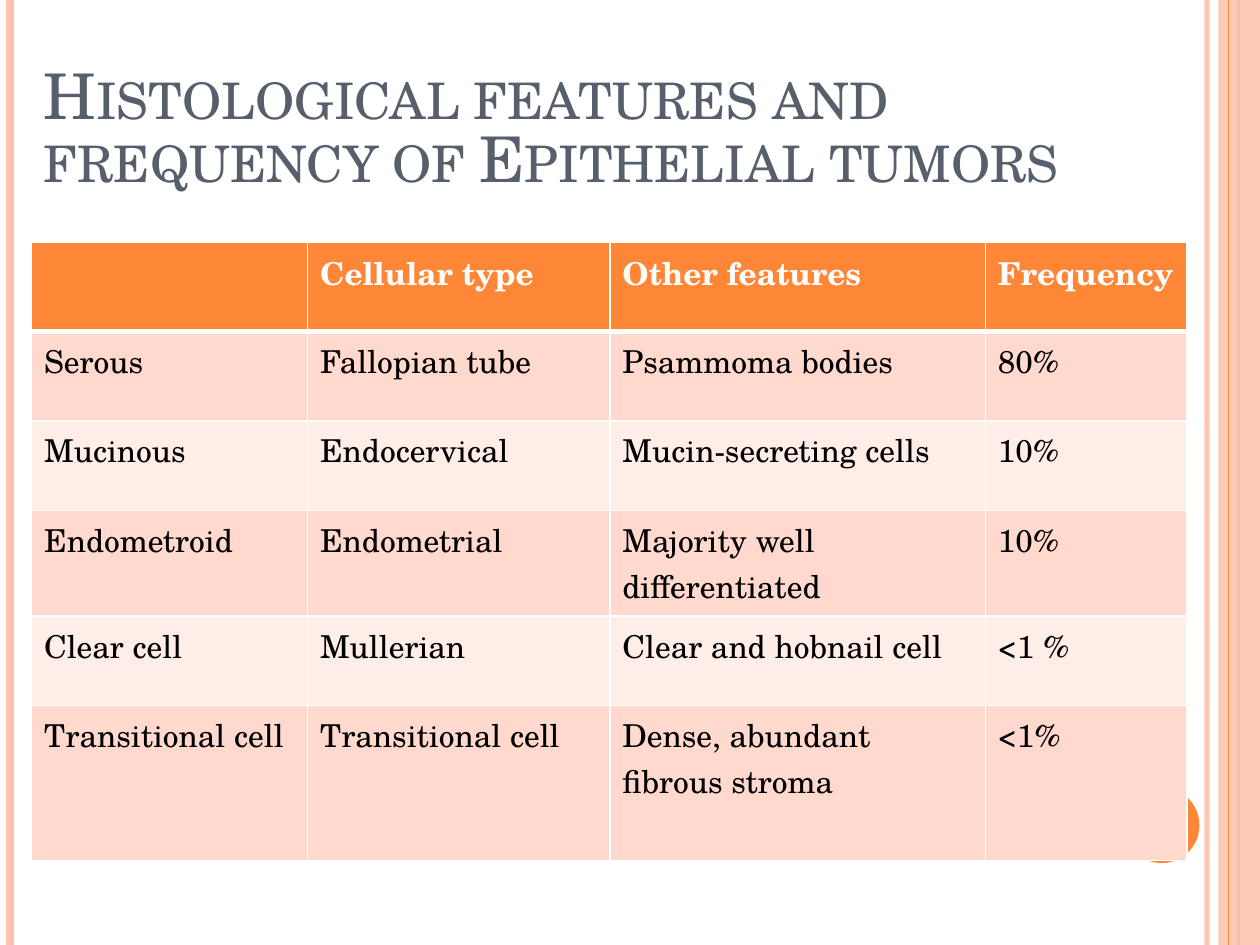
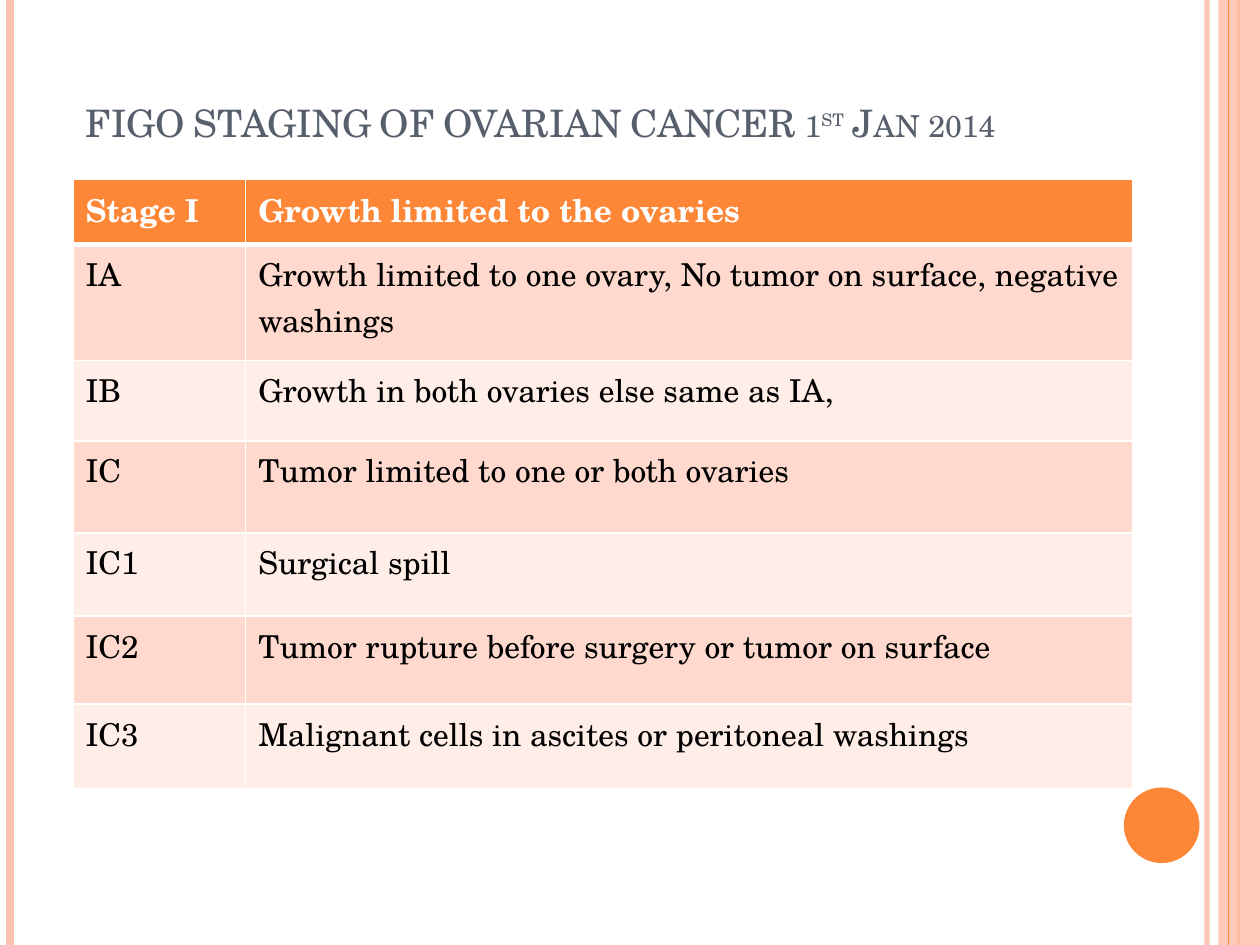
"""Build two slides on ovarian tumors: histological features and staging."""
from lxml.etree import SubElement
from pptx import Presentation
from pptx.dml.color import RGBColor
from pptx.enum.shapes import MSO_CONNECTOR as CONNECTOR, MSO_SHAPE as SHAPE
from pptx.enum.text import MSO_ANCHOR as ANCHOR
from pptx.oxml.ns import qn
from pptx.util import Inches, Pt

FONT = "TeX Gyre Schola"
ORANGE = RGBColor(0xFE, 0x86, 0x37)
PEACH = RGBColor(0xFE, 0xC3, 0xAE)
SLATE = RGBColor(0x57, 0x5F, 0x6D)
WHITE = RGBColor(0xFF, 0xFF, 0xFF)
BLACK = RGBColor(0, 0, 0)
ROW_TINTS = (RGBColor(0xFF, 0xED, 0xE8), RGBColor(0xFF, 0xD9, 0xCE))

HISTOLOGY = [
    ("", "Cellular type", "Other features", "Frequency"),
    ("Serous", "Fallopian tube", "Psammoma bodies", "80%"),
    ("Mucinous", "Endocervical", "Mucin-secreting cells", "10%"),
    ("Endometroid", "Endometrial", "Majority well differentiated", "10%"),
    ("Clear cell", "Mullerian", "Clear and hobnail cell", "<1 %"),
    ("Transitional cell", "Transitional cell", "Dense, abundant fibrous stroma", "<1%"),
]
STAGES = [
    ("Stage I", "Growth limited to the ovaries"),
    ("IA", "Growth limited to one ovary, No tumor on surface, negative washings"),
    ("IB", "Growth in both ovaries else same as IA,"),
    ("IC", "Tumor limited to one or both ovaries"),
    ("IC1", "Surgical spill"),
    ("IC2", "Tumor rupture before surgery or tumor on surface"),
    ("IC3", "Malignant cells in ascites or peritoneal washings"),
]


def set_alpha(properties, percent):
    """Make the first colour in a shape's properties partly transparent."""
    color = next(properties.iter(qn("a:srgbClr")))
    SubElement(color, qn("a:alpha"), val=str(percent * 1000))


def add_stripe(page, left, color, width, alpha=100):
    """Draw a full-height vertical line."""
    stripe = page.shapes.add_connector(
        CONNECTOR.STRAIGHT, Inches(left), 0, Inches(left), Inches(7.5))
    stripe.line.color.rgb = color
    stripe.line.width = Pt(width)
    properties = stripe._element.spPr
    SubElement(properties, qn("a:effectLst"))
    if alpha < 100:
        set_alpha(properties, alpha)


def add_plain_shape(page, kind, bounds, color):
    """Draw a filled shape without outline or shadow."""
    shape = page.shapes.add_shape(kind, *map(Inches, bounds))
    shape.shadow.inherit = False
    shape.fill.solid()
    shape.fill.fore_color.rgb = color
    shape.line.fill.background()
    return shape


def add_page(deck):
    """Add a blank page with the shared side bands and corner disc."""
    page = deck.slides.add_slide(deck.slide_layouts[6])
    add_stripe(page, 9.58, PEACH, 3, 93)
    add_stripe(page, 0.08, PEACH, 4.5)
    add_stripe(page, 9.83, ORANGE, 1.5)
    band = add_plain_shape(page, SHAPE.RECTANGLE, (9.67, 0, 0.33, 7.5), PEACH)
    set_alpha(band._element.spPr, 87)
    add_stripe(page, 9.75, ORANGE, 0.75)
    add_plain_shape(page, SHAPE.OVAL, (8.92, 6.25, 0.6, 0.6), ORANGE)
    return page


def add_span(para, text, size, color, bold=False):
    """Add one formatted run to a paragraph."""
    span = para.add_run()
    span.text = text
    span.font.name = FONT
    span.font.size = Pt(size)
    span.font.color.rgb = color
    span.font.bold = bold
    return span


def add_title(page, bounds, parts, line_spacing=1.0):
    """Add a small-caps title from (text, size, baseline percent) parts."""
    box = page.shapes.add_textbox(*map(Inches, bounds))
    frame = box.text_frame
    frame.word_wrap = True
    frame.vertical_anchor = ANCHOR.BOTTOM
    frame.margin_bottom = 0
    para = frame.paragraphs[0]
    para.line_spacing = line_spacing
    for text, size, baseline in parts:
        properties = add_span(para, text, size, SLATE).font._element
        properties.set("cap", "small")
        if baseline:
            properties.set("baseline", str(baseline * 1000))


def set_borders(cell, top, bottom):
    """Give a cell white borders; top and bottom widths are in points."""
    properties = cell._tc.get_or_add_tcPr()
    for side, width in (("L", 1), ("R", 1), ("T", top), ("B", bottom)):
        line = SubElement(properties, qn(f"a:ln{side}"), w=str(Pt(width)))
        fill = SubElement(line, qn("a:solidFill"))
        SubElement(fill, qn("a:srgbClr"), val=str(WHITE))


def add_banded_table(page, left, top, widths, heights, records):
    """Add a table with an orange header and alternating row tints."""
    table = page.shapes.add_table(
        len(heights), len(widths), Inches(left), Inches(top),
        Inches(sum(widths)), Inches(sum(heights))).table
    for column, width in zip(table.columns, widths):
        column.width = Inches(width)
    for index, (height, record) in enumerate(zip(heights, records)):
        table.rows[index].height = Inches(height)
        header = index == 0
        for column, text in enumerate(record):
            cell = table.cell(index, column)
            set_borders(cell, 3 if index == 1 else 1, 3 if header else 1)
            cell.fill.solid()
            cell.fill.fore_color.rgb = ORANGE if header else ROW_TINTS[index % 2]
            if text:
                add_span(cell.text_frame.paragraphs[0], text, 18,
                         WHITE if header else BLACK, header)


def main():
    """Build and save the deck."""
    deck = Presentation()
    deck.slide_width, deck.slide_height = Inches(10), Inches(7.5)

    page = add_page(deck)
    add_title(page, (0.25, 0.3, 9.08, 1.25),
              [("Histological features and frequency of Epithelial tumors", 36, 0)], 0.83)
    add_banded_table(page, 0.25, 1.92, (2.19, 2.4, 2.98, 1.6),
                     (0.71, 0.71, 0.71, 0.84, 0.71, 1.23), HISTOLOGY)

    page = add_page(deck)
    add_title(page, (0.5, 0.3, 8.17, 0.87),
              [(" ", 27, 0), ("FIGO STAGING OF OVARIAN CANCER 1", 21.6, 0),
               ("st", 21.6, 30), (" Jan 2014", 21.6, 0)])
    add_banded_table(page, 0.58, 1.42, (1.37, 7.04),
                     (0.52, 0.92, 0.64, 0.73, 0.66, 0.7, 0.67), STAGES)
    deck.save("out.pptx")


if __name__ == "__main__":
    main()
